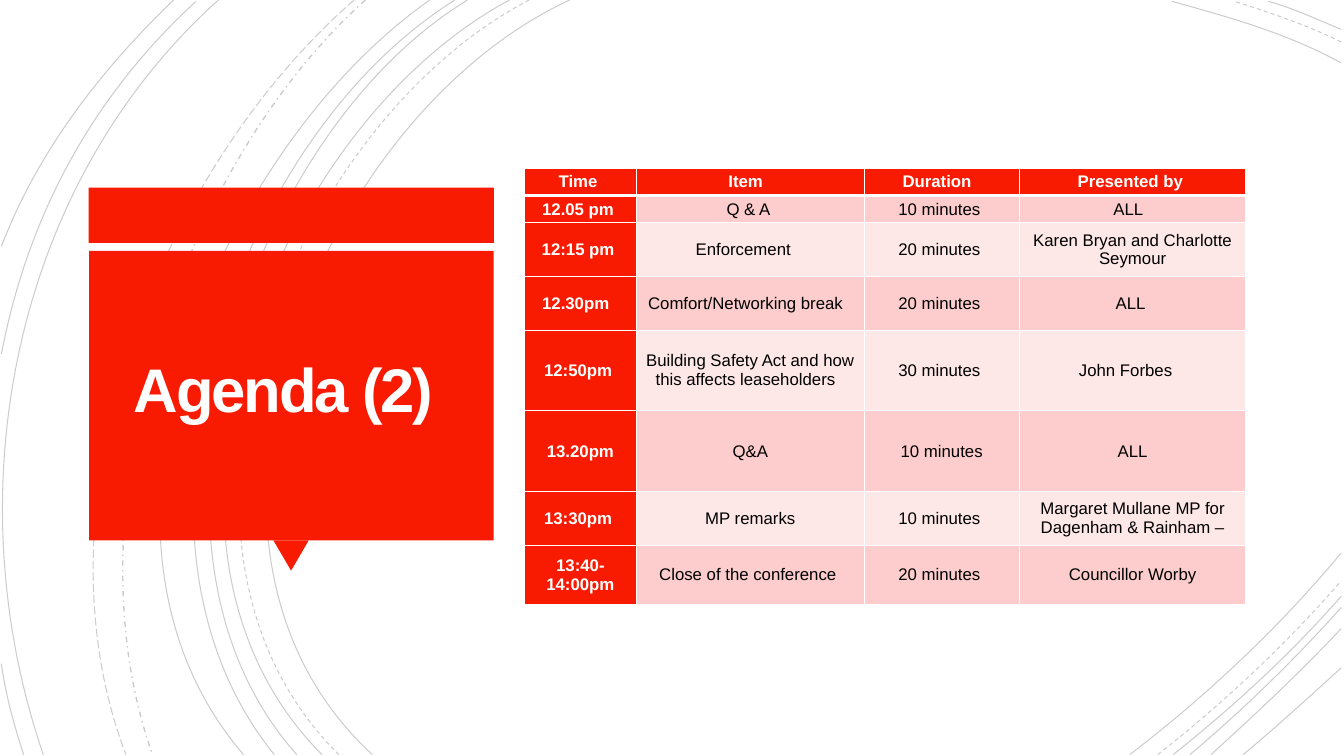
from dataclasses import dataclass

from lxml import etree
from pptx import Presentation
from pptx.dml.color import RGBColor
from pptx.enum.dml import MSO_LINE
from pptx.enum.shapes import MSO_SHAPE
from pptx.enum.text import MSO_ANCHOR, PP_ALIGN
from pptx.oxml.ns import qn
from pptx.util import Pt

SOLID, DASH = MSO_LINE.SOLID, MSO_LINE.DASH
DOT, LONG = MSO_LINE.DASH_DOT, MSO_LINE.LONG_DASH
RECT, WEDGE = MSO_SHAPE.RECTANGLE, MSO_SHAPE.ISOSCELES_TRIANGLE
MIDDLE, CENTER = MSO_ANCHOR.MIDDLE, PP_ALIGN.CENTER


@dataclass(frozen=True)
class Theme:
    red: str = "F81B02"
    rose: str = "FCCDCC"
    blush: str = "FEE8E7"
    white: str = "FFFFFF"
    cream: str = "FFFEFF"
    black: str = "000000"
    font: str = "Arial"
    title: int = 44
    body: int = 12


THEME = Theme()

ARCS = [
    (SOLID, 0.75, [
        (407, 0, 227, 83, 103, 389, 266, 539),
        (958, 45, 920, 24, 877, 12, 837, 1),
        (807, 539, 862, 497, 914, 448, 958, 395),
        (364, 0, 194, 91, 79, 387, 230, 539),
        (958, 21, 941, 14, 924, 6, 906, 1),
        (838, 539, 881, 505, 922, 467, 958, 426),
        (334, 0, 176, 96, 79, 390, 212, 539),
        (850, 539, 888, 507, 924, 472, 958, 434),
        (325, 0, 166, 99, 70, 384, 196, 539),
        (865, 539, 897, 510, 929, 480, 958, 449),
        (307, 0, 156, 106, 38, 381, 174, 539),
        (888, 539, 912, 519, 935, 498, 958, 477),
        (156, 0, 8, 133, -33, 353, 31, 539),
        (140, 1, 66, 69, 20, 154, 1, 253),
        (1, 474, 4, 496, 10, 518, 17, 539),
        (124, 0, 72, 50, 27, 108, 1, 176),
    ]),
    (DASH, 0.75, [
        (378, 0, 205, 90, 89, 387, 242, 539),
        (958, 30, 934, 18, 907, 9, 882, 1),
        (827, 539, 873, 503, 918, 461, 958, 415),
    ]),
    (DOT, 1, [(261, 0, 127, 120, 47, 366, 109, 539)]),
    (LONG, 0.75, [(253, 0, 113, 122, 21, 359, 90, 539)]),
]

BLOCKS = [
    (RECT, (63.3, 134, 289.5, 39.6), 0),
    (WEDGE, (195.3, 386, 25.2, 21.6), 180),
    (RECT, (63.6, 179.3, 289, 206.7), 0),
]

COLS = [80, 162.7, 110.8, 162]
ROWS = [19.4, 19.4, 38.4, 38.4, 57.6, 57.6, 38.4, 42.3]
AGENDA = [
    ("Time ", "Item  ", "Duration  ", "Presented by "),
    ("12.05 pm ", "Q & A ", "10 minutes ", "ALL  "),
    ("12:15 pm ", "Enforcement   ", "20 minutes ", "Karen Bryan and Charlotte Seymour"),
    ("12.30pm  ", "Comfort/Networking break  ", "20 minutes ", "ALL "),
    ("12:50pm ", "Building Safety Act and how this affects leaseholders  ",
     "30 minutes ", "John Forbes   "),
    ("13.20pm", "Q&A", "10 minutes", "ALL"),
    ("13:30pm ", "MP remarks", "10 minutes ", "Margaret Mullane MP for Dagenham & Rainham –"),
    ("13:40-14:00pm", "Close of the conference ", "20 minutes ", "Councillor Worby"),
]


def apply(item, form):
    for name, value in form.items():
        setattr(item, name, value)


def paint(fill, color):
    fill.solid()
    fill.fore_color.rgb = RGBColor.from_string(color)


def write(frame, text, size, color, bold):
    para = frame.paragraphs[0]
    para.alignment = CENTER
    run = para.add_run()
    run.text = text
    apply(run.font, {"name": THEME.font, "size": Pt(size), "bold": bold})
    run.font.color.rgb = RGBColor.from_string(color)
    return para, run


def add_arc(slide, points, dash, width):
    pairs = [(Pt(x), Pt(y)) for x, y in zip(points[::2], points[1::2])]
    pen = slide.shapes.build_freeform(*pairs[0])
    pen.add_line_segments(pairs[1:], close=False)
    arc = pen.convert_to_shape()
    track = arc._element.find(".//" + qn("a:path"))
    curve = etree.SubElement(track, qn("a:cubicBezTo"))
    for step in track.findall(qn("a:lnTo")):
        curve.append(step[0])
        track.remove(step)
    arc.shadow.inherit = False
    arc.fill.background()
    apply(arc.line, {"width": Pt(width), "dash_style": dash})
    paint(arc.line.fill, THEME.black)
    tone = arc.line._ln.find(".//" + qn("a:srgbClr"))
    etree.SubElement(tone, qn("a:alpha"), val="20000")


def add_block(slide, kind, box, turn):
    block = slide.shapes.add_shape(kind, *map(Pt, box))
    block.shadow.inherit = False
    block.rotation = turn
    paint(block.fill, THEME.red)
    block.line.fill.background()


def add_title(slide, text):
    frame = slide.shapes.add_textbox(Pt(70), Pt(184.3), Pt(275.8), Pt(194.4)).text_frame
    apply(frame, {"word_wrap": True, "vertical_anchor": MIDDLE})
    apply(frame, {"margin_" + side: Pt(7.2) for side in ("left", "right", "top", "bottom")})
    para, run = write(frame, text, THEME.title, THEME.cream, True)
    para.line_spacing = 0.85
    run.font._element.set("spc", "-150")


def add_edge(cell, side, width):
    edge = etree.SubElement(cell._tc.get_or_add_tcPr(), qn("a:ln" + side), w=str(Pt(width)))
    fill = etree.SubElement(edge, qn("a:solidFill"))
    etree.SubElement(fill, qn("a:srgbClr"), val=THEME.white)


def fill_cell(cell, text, row, col):
    head = row == 0 or col == 0
    thick = {"T": 3 if row == 1 else 1, "B": 3 if row == 0 else 1}
    for side in "LRTB":
        add_edge(cell, side, thick.get(side, 1))
    band = THEME.rose if row % 2 else THEME.blush
    paint(cell.fill, THEME.red if head else band)
    apply(cell, {"margin_" + side: 0 for side in ("left", "right", "top", "bottom")})
    cell.vertical_anchor = MIDDLE
    write(cell.text_frame, text, THEME.body, THEME.white if head else THEME.black, head)


def add_grid(slide):
    box = map(Pt, (374.6, 120.3, sum(COLS), sum(ROWS)))
    table = slide.shapes.add_table(len(ROWS), len(COLS), *box).table
    apply(table, {"first_row": True, "first_col": True, "horz_banding": False})
    for col, width in zip(table.columns, COLS):
        col.width = Pt(width)
    for row, height in zip(table.rows, ROWS):
        row.height = Pt(height)
    for row, texts in enumerate(AGENDA):
        for col, text in enumerate(texts):
            fill_cell(table.cell(row, col), text, row, col)


def main():
    deck = Presentation()
    apply(deck, {"slide_width": Pt(960), "slide_height": Pt(540)})
    slide = deck.slides.add_slide(deck.slide_layouts[6])
    paint(slide.background.fill, THEME.white)
    for dash, width, curves in ARCS:
        for points in curves:
            add_arc(slide, points, dash, width)
    for kind, box, turn in BLOCKS:
        add_block(slide, kind, box, turn)
    add_title(slide, "Agenda (2) ")
    add_grid(slide)
    deck.save("out.pptx")


if __name__ == "__main__":
    main()
